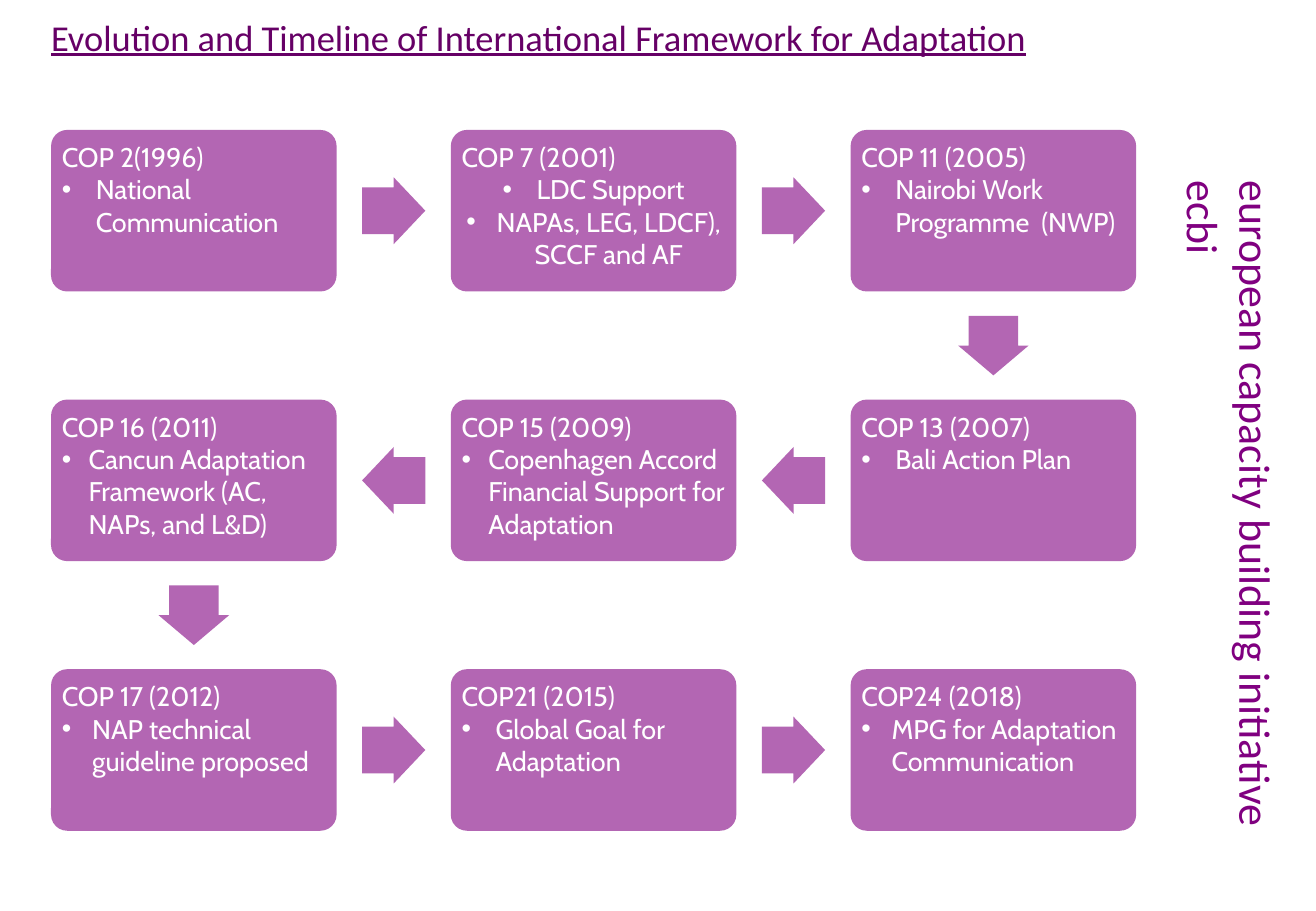
from dataclasses import dataclass

from lxml.etree import SubElement
from pptx import Presentation
from pptx.dml.color import RGBColor
from pptx.enum.shapes import MSO_SHAPE
from pptx.enum.text import MSO_ANCHOR, PP_ALIGN
from pptx.oxml.ns import qn
from pptx.shapes.autoshape import Shape
from pptx.slide import Slide
from pptx.util import Inches, Pt

ORCHID = RGBColor(0xB3, 0x66, 0xB3)
PLUM = RGBColor(0x66, 0x00, 0x66)
PURPLE = RGBColor(0x80, 0x00, 0x80)
WHITE = RGBColor(0xFF, 0xFF, 0xFF)

LEFT, TOP = 0.42, 1.07
CARD_WIDTH, CARD_HEIGHT = 2.35, 1.33
COLUMN_STEP, ROW_STEP = 3.29, 2.22


@dataclass(frozen=True)
class Bullet:
    text: str
    indent: float = 0.28
    align: PP_ALIGN = PP_ALIGN.LEFT


@dataclass(frozen=True)
class Milestone:
    column: int
    row: int
    heading: str
    bullets: tuple[Bullet, ...]

    @property
    def left(self) -> float:
        return LEFT + self.column * COLUMN_STEP

    @property
    def top(self) -> float:
        return TOP + self.row * ROW_STEP

    @property
    def center(self) -> tuple[float, float]:
        return self.left + CARD_WIDTH / 2, self.top + CARD_HEIGHT / 2


MILESTONES = (
    Milestone(0, 0, "COP 2(1996)", (Bullet("National Communication"),)),
    Milestone(1, 0, "COP 7 (2001)", (
        Bullet("LDC Support", align=PP_ALIGN.CENTER),
        Bullet("NAPAs, LEG, LDCF), SCCF and AF", 0.25, PP_ALIGN.CENTER),
    )),
    Milestone(2, 0, "COP 11 (2005)", (Bullet("Nairobi Work Programme  (NWP)"),)),
    Milestone(2, 1, "COP 13 (2007)", (Bullet("Bali Action Plan"),)),
    Milestone(1, 1, "COP 15 (2009)", (
        Bullet("Copenhagen Accord  Financial Support for Adaptation", 0.22),
    )),
    Milestone(0, 1, "COP 16 (2011)", (
        Bullet("Cancun Adaptation Framework (AC, NAPs, and L&D)", 0.22),
    )),
    Milestone(0, 2, "COP 17 (2012)", (Bullet("NAP technical guideline proposed", 0.25),)),
    Milestone(1, 2, "COP21 (2015)", (Bullet("Global Goal for Adaptation"),)),
    Milestone(2, 2, "COP24 (2018)", (Bullet("MPG for Adaptation Communication", 0.25),)),
)


def add_filled_shape(page: Slide, kind: MSO_SHAPE, left: float, top: float,
                     width: float, height: float) -> Shape:
    shape = page.shapes.add_shape(
        kind, Inches(left), Inches(top), Inches(width), Inches(height))
    shape.shadow.inherit = False
    shape.fill.solid()
    shape.fill.fore_color.rgb = ORCHID
    shape.line.fill.background()
    return shape


def add_card(page: Slide, milestone: Milestone) -> None:
    card = add_filled_shape(page, MSO_SHAPE.ROUNDED_RECTANGLE, milestone.left,
                            milestone.top, CARD_WIDTH, CARD_HEIGHT)
    card.adjustments[0] = 0.1
    frame = card.text_frame
    frame.word_wrap = True
    frame.vertical_anchor = MSO_ANCHOR.TOP
    frame.margin_left = frame.margin_right = Inches(0.05)
    frame.margin_top = frame.margin_bottom = Inches(0.05)
    frame.text = milestone.heading
    frame.paragraphs[0].alignment = PP_ALIGN.LEFT
    for bullet in milestone.bullets:
        para = frame.add_paragraph()
        para.text = bullet.text
        para.alignment = bullet.align
        properties = para._p.get_or_add_pPr()
        properties.set("marL", str(Inches(bullet.indent)))
        properties.set("indent", str(-Inches(bullet.indent)))
        SubElement(properties, qn("a:buFont")).set("typeface", "Arial")
        SubElement(properties, qn("a:buChar")).set("char", "•")
    for para in frame.paragraphs:
        for span in para.runs:
            span.font.name = "Cabin"
            span.font.size = Pt(16)
            span.font.color.rgb = WHITE


def add_arrow(page: Slide, start: Milestone, end: Milestone) -> None:
    if start.row == end.row:
        width, height = 0.52, 0.55
        rotation = 0 if end.column > start.column else 180
    else:
        width, height, rotation = 0.49, 0.58, 90
    middle_x, middle_y = ((a + b) / 2 for a, b in zip(start.center, end.center))
    arrow = add_filled_shape(page, MSO_SHAPE.RIGHT_ARROW, middle_x - width / 2,
                             middle_y - height / 2, width, height)
    arrow.adjustments[0] = 0.7
    arrow.adjustments[1] = 0.5
    arrow.rotation = rotation


def set_title(page: Slide) -> None:
    title = page.shapes.title
    title.left, title.top = Inches(LEFT), Inches(0.13)
    title.width, title.height = Inches(9.31), Inches(0.34)
    frame = title.text_frame
    frame.word_wrap = True
    frame.vertical_anchor = MSO_ANCHOR.MIDDLE
    frame.margin_left = frame.margin_right = 0
    frame.margin_top = frame.margin_bottom = 0
    frame.text = "Evolution and Timeline of International Framework for Adaptation"
    para = frame.paragraphs[0]
    para.alignment = PP_ALIGN.LEFT
    font = para.runs[0].font
    font.name = "Calibri"
    font.size = Pt(21.6)
    font.underline = True
    font.color.rgb = PLUM


def add_side_banner(page: Slide) -> None:
    box = page.shapes.add_textbox(
        Inches(9.86), Inches(1.39), Inches(0.75), Inches(5.99))
    frame = box.text_frame
    frame.word_wrap = True
    frame._txBody.bodyPr.set("vert", "eaVert")
    frame.text = "european capacity building initiative ecbi"
    font = frame.paragraphs[0].runs[0].font
    font.name = "Calibri"
    font.size = Pt(26)
    font.color.rgb = PURPLE


def main() -> None:
    deck = Presentation()
    deck.slide_width, deck.slide_height = Inches(10.83), Inches(7.5)
    page = deck.slides.add_slide(deck.slide_layouts[5])
    add_side_banner(page)
    set_title(page)
    for milestone in MILESTONES:
        add_card(page, milestone)
    for start, end in zip(MILESTONES, MILESTONES[1:]):
        add_arrow(page, start, end)
    deck.save("out.pptx")


if __name__ == "__main__":
    main()
